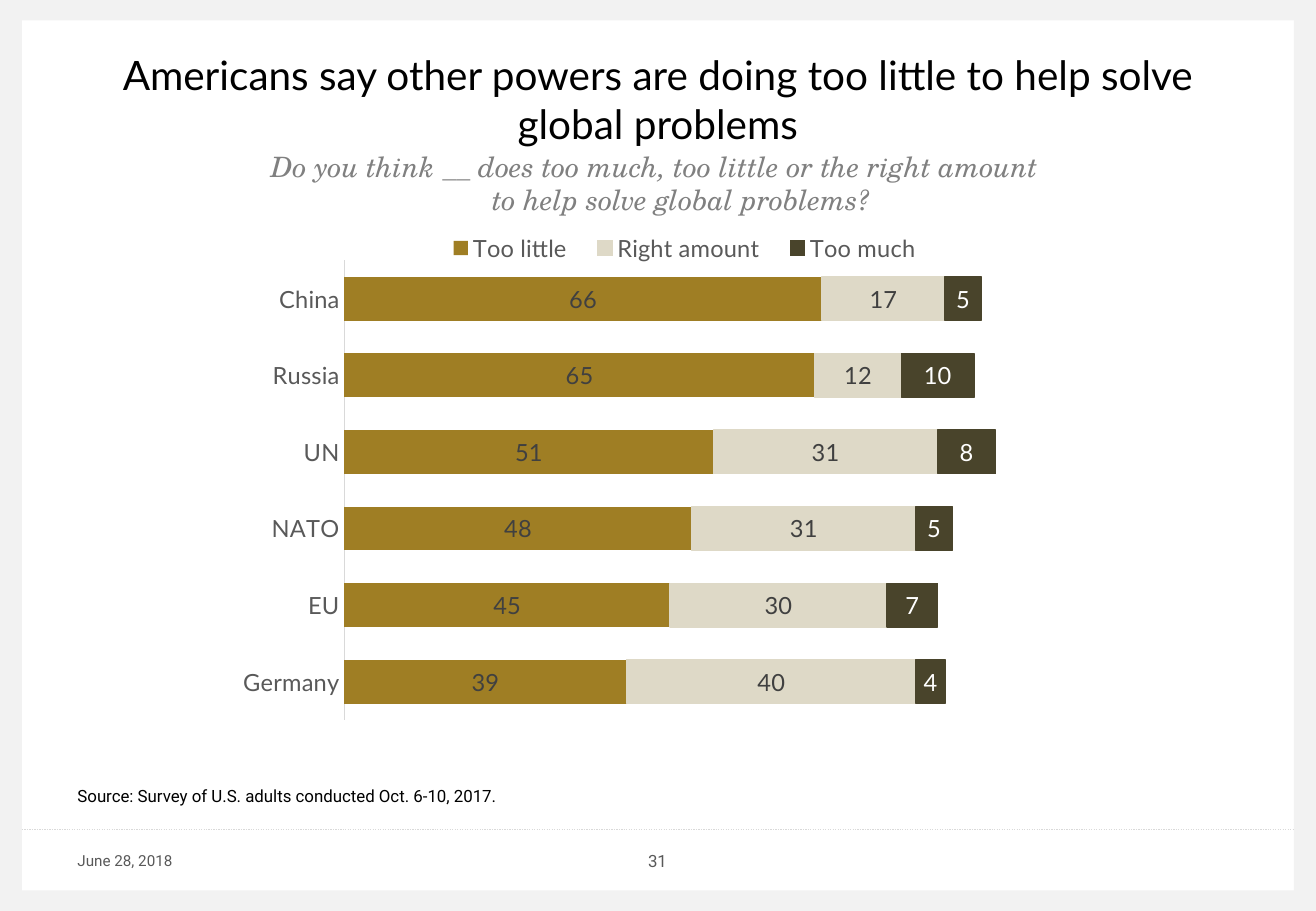
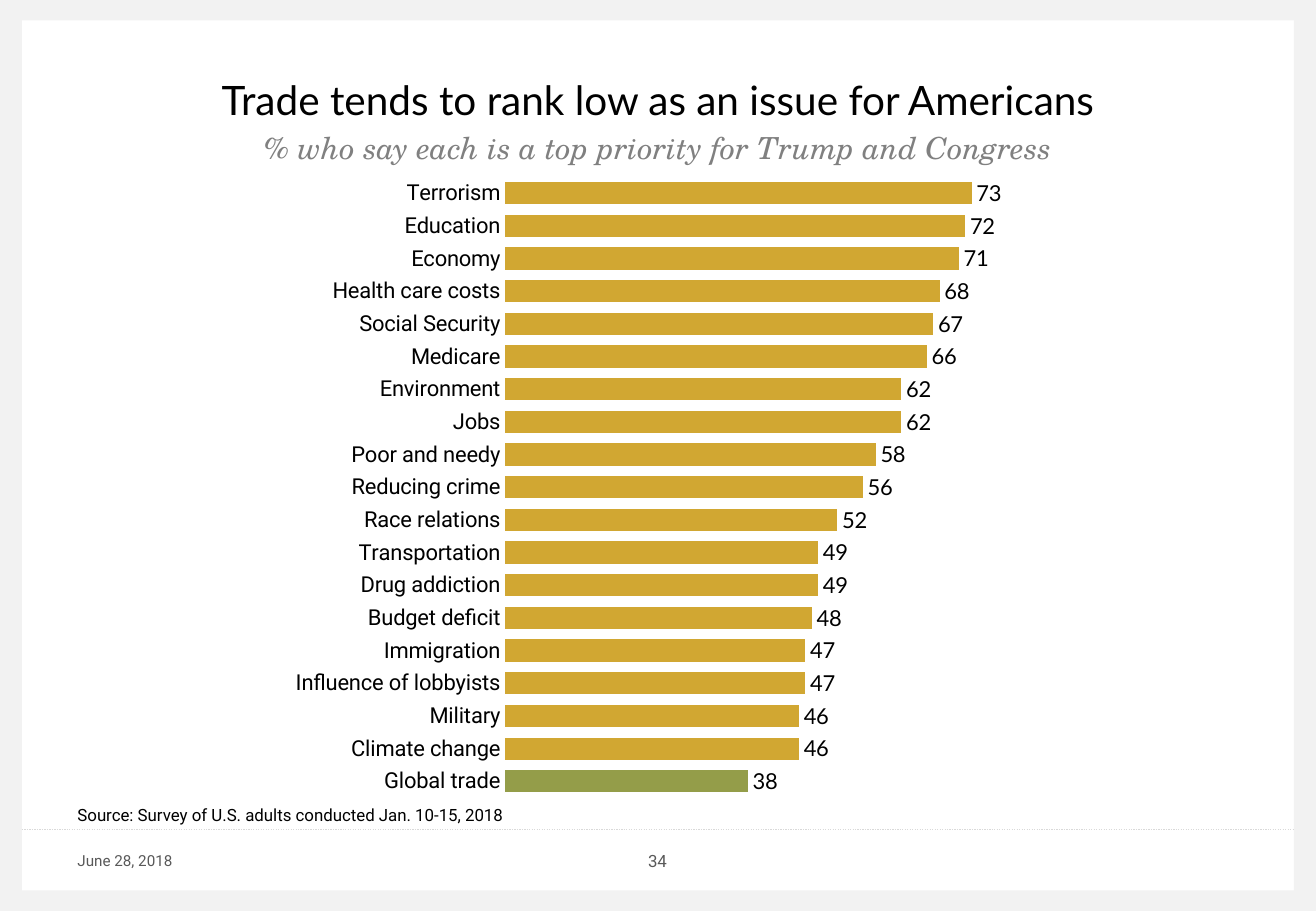
"""Build two survey slides, each with a titled bar chart in a shared frame."""
from lxml import etree
from pptx import Presentation
from pptx.chart.data import CategoryChartData
from pptx.dml.color import RGBColor
from pptx.enum.chart import (XL_CHART_TYPE, XL_LABEL_POSITION, XL_LEGEND_POSITION,
                             XL_TICK_LABEL_POSITION, XL_TICK_MARK)
from pptx.enum.dml import MSO_LINE
from pptx.enum.shapes import MSO_CONNECTOR, MSO_SHAPE
from pptx.enum.text import MSO_ANCHOR, MSO_AUTO_SIZE, PP_ALIGN
from pptx.oxml.ns import qn
from pptx.util import Cm, Pt

CENTER, LEFT = PP_ALIGN.CENTER, PP_ALIGN.LEFT
TOP, MIDDLE, BOTTOM = MSO_ANCHOR.TOP, MSO_ANCHOR.MIDDLE, MSO_ANCHOR.BOTTOM
STACKED, CLUSTERED = XL_CHART_TYPE.BAR_STACKED, XL_CHART_TYPE.BAR_CLUSTERED
LABEL_CENTER, LABEL_END = XL_LABEL_POSITION.CENTER, XL_LABEL_POSITION.OUTSIDE_END
NO_TICK, NO_LABELS = XL_TICK_MARK.NONE, XL_TICK_LABEL_POSITION.NONE

HEADING, BODY, ITALIC = "Lato", "Roboto", "TeX Gyre Schola"
BLACK, WHITE, GRAY, DARK = "000000", "FFFFFF", "595959", "404040"
MUTED, RULE, BAND = "808080", "D9D9D9", "F2F2F2"

WIDTH, HEIGHT = 27.52, 19.05
SIDE, EDGE = 0.46, 0.43
MARGIN, CONTENT_WIDTH = 1.37, 24.77
RULE_Y, FOOTER_Y, FOOTER_HEIGHT = 17.35, 17.58, 0.84
HANGING = 0.97
DATE = "June 28, 2018"

SLIDES = [
    {
        "number": "31",
        "title": "Americans say other powers are doing too little to help solve global problems",
        "question": "Do you think __ does too much, too little or the right amount \v"
                    "to help solve global problems?",
        "question_top": 3.18, "question_size": 16.6,
        "source": "Source: Survey of U.S. adults conducted Oct. 6-10, 2017.",
        "source_top": 16.31,
        "chart": {
            "type": STACKED, "box": (4.6, 3.89, 18.34, 11.28), "gap": 75,
            "plot": (0.142, 0.138, 0.825, 0.852), "legend": (0.24, 0.07, 0.58, 0.09),
            "axis_font": (HEADING, 14, GRAY), "axis_line": RULE, "reverse": False,
            "label_position": LABEL_CENTER,
            "categories": ["Germany", "EU", "NATO", "UN", "Russia", "China"],
            "series": [
                {"name": "Too little", "values": (39, 45, 48, 51, 65, 66),
                 "color": "9F7E24", "label_font": (HEADING, 14, DARK)},
                {"name": "Right amount", "values": (40, 30, 31, 31, 12, 17),
                 "color": "DED9C7", "line": "DED9C7", "label_font": (HEADING, 14, DARK)},
                {"name": "Too much", "values": (4, 7, 5, 8, 10, 5),
                 "color": "49442B", "line": "49442B", "label_font": (HEADING, 14, WHITE)},
            ],
        },
    },
    {
        "number": "34",
        "title": "Trade tends to rank low as an issue for Americans",
        "question": "% who say each is a top priority for Trump and Congress",
        "question_top": 2.11, "question_size": 18,
        "source": "Source: Survey of U.S. adults conducted Jan. 10-15, 2018",
        "source_top": 16.71,
        "chart": {
            "type": CLUSTERED, "box": (5.51, 3.43, 18.57, 13.51), "gap": 47,
            "plot": (0.272, 0.02, 0.72, 0.961),
            "axis_font": (BODY, 13, BLACK), "axis_line": None, "reverse": True,
            "label_position": LABEL_END,
            "categories": [
                "Terrorism", "Education", "Economy", "Health care costs", "Social Security",
                "Medicare", "Environment", "Jobs", "Poor and needy", "Reducing crime",
                "Race relations", "Transportation", "Drug addiction", "Budget deficit",
                "Immigration", "Influence of lobbyists", "Military", "Climate change",
                "Global trade"],
            "series": [
                {"name": "Series 1", "color": "D1A732", "points": {18: "949D49"},
                 "values": (73, 72, 71, 68, 67, 66, 62, 62, 58, 56, 52, 49, 49, 48, 47, 47,
                            46, 46, 38),
                 "label_font": (HEADING, 13, BLACK)},
            ],
        },
    },
]


def rgb(color):
    return RGBColor.from_string(color)


def style_font(font, name, size, color, italic=False):
    font.name, font.size, font.italic = name, Pt(size), italic
    font.color.rgb = rgb(color)


def paint(format_, color):
    format_.fill.solid()
    format_.fill.fore_color.rgb = rgb(color)


def write(shape, text, font, align=LEFT, anchor=MIDDLE, hanging=0.0):
    frame = shape.text_frame
    frame.word_wrap = True
    frame.auto_size = MSO_AUTO_SIZE.NONE
    frame.vertical_anchor = anchor
    frame.text = text
    paragraph = frame.paragraphs[0]
    paragraph.alignment = align
    if hanging:
        properties = paragraph._p.get_or_add_pPr()
        properties.set("marL", str(Cm(hanging)))
        properties.set("indent", str(-Cm(hanging)))
    style_font(paragraph.font, *font)


def add_text(slide, box, *content, **options):
    write(slide.shapes.add_textbox(*map(Cm, box)), *content, **options)


def add_frame(slide, number):
    inner_width = WIDTH - 2 * SIDE
    bands = [(0, 0, SIDE, HEIGHT), (WIDTH - SIDE, 0, SIDE, HEIGHT),
             (SIDE, 0, inner_width, EDGE), (SIDE, HEIGHT - EDGE, inner_width, EDGE)]
    for box in bands:
        band = slide.shapes.add_shape(MSO_SHAPE.RECTANGLE, *map(Cm, box))
        band.shadow.inherit = False
        paint(band, BAND)
        band.line.fill.background()
    rule = slide.shapes.add_connector(
        MSO_CONNECTOR.STRAIGHT, Cm(SIDE), Cm(RULE_Y), Cm(WIDTH - SIDE), Cm(RULE_Y))
    rule.line.color.rgb = rgb(RULE)
    rule.line.width = Pt(0.75)
    rule.line.dash_style = MSO_LINE.ROUND_DOT
    etree.SubElement(rule._element.spPr, qn("a:effectLst"))
    add_text(slide, (MARGIN, FOOTER_Y, 3.66, FOOTER_HEIGHT), DATE, (BODY, 9, GRAY))
    number_width = 3.2
    add_text(slide, ((WIDTH - number_width) / 2 - 0.01, FOOTER_Y, number_width, FOOTER_HEIGHT),
             number, (BODY, 10, GRAY), align=CENTER)


def set_layout(parent, index, fractions, inner=False):
    for existing in parent.findall(qn("c:layout")):
        parent.remove(existing)
    layout = etree.Element(qn("c:layout"))
    manual = etree.SubElement(layout, qn("c:manualLayout"))
    settings = [("layoutTarget", "inner")] if inner else []
    settings += [("xMode", "edge"), ("yMode", "edge")]
    settings += zip("xywh", map(str, fractions))
    for tag, value in settings:
        etree.SubElement(manual, qn("c:" + tag)).set("val", value)
    parent.insert(index, layout)


def style_axes(chart, content):
    category_axis, value_axis = chart.category_axis, chart.value_axis
    category_axis.major_tick_mark = NO_TICK
    category_axis.reverse_order = content["reverse"]
    style_font(category_axis.tick_labels.font, *content["axis_font"])
    line = category_axis.format.line
    if content["axis_line"]:
        line.color.rgb = rgb(content["axis_line"])
        line.width = Pt(0.75)
    else:
        line.fill.background()
    value_axis.minimum_scale, value_axis.maximum_scale = 0, 100
    value_axis.has_major_gridlines = False
    value_axis.major_tick_mark = NO_TICK
    value_axis.tick_label_position = NO_LABELS
    value_axis.format.line.fill.background()


def add_bar_chart(slide, content):
    data = CategoryChartData()
    data.categories = content["categories"]
    for entry in content["series"]:
        data.add_series(entry["name"], entry["values"])
    chart = slide.shapes.add_chart(content["type"], *map(Cm, content["box"]), data).chart
    style_font(chart.font, BODY, 10, BLACK)
    chart.has_title = False
    plot = chart.plots[0]
    plot.vary_by_categories = False
    plot.gap_width = content["gap"]
    style_axes(chart, content)
    for series, entry in zip(plot.series, content["series"]):
        paint(series.format, entry["color"])
        if "line" in entry:
            series.format.line.color.rgb = rgb(entry["line"])
            series.format.line.width = Pt(0.75)
        for index, color in entry.get("points", {}).items():
            paint(series.points[index].format, color)
        labels = series.data_labels
        labels.show_value = True
        labels.position = content["label_position"]
        style_font(labels.font, *entry["label_font"])
    chart.has_legend = "legend" in content
    if chart.has_legend:
        legend = chart.legend
        legend.position = XL_LEGEND_POSITION.BOTTOM
        legend.include_in_layout = False
        style_font(legend.font, *content["axis_font"])
        set_layout(legend._element, 1, content["legend"])
    set_layout(chart._chartSpace.chart.plotArea, 0, content["plot"], inner=True)


def build_slide(presentation, content):
    slide = presentation.slides.add_slide(presentation.slide_layouts[5])
    add_frame(slide, content["number"])
    title = slide.shapes.title
    title.left, title.top = Cm(MARGIN), Cm(0.76)
    title.width, title.height = Cm(CONTENT_WIDTH), Cm(2.62)
    write(title, content["title"], (HEADING, 24, BLACK), align=CENTER)
    add_text(slide, (MARGIN, content["question_top"], CONTENT_WIDTH, 1.47),
             content["question"], (ITALIC, content["question_size"], MUTED, True),
             align=CENTER, anchor=BOTTOM, hanging=HANGING)
    add_text(slide, (MARGIN, content["source_top"], 22.94, 0.64),
             content["source"], (BODY, 10, BLACK), anchor=TOP, hanging=HANGING)
    add_bar_chart(slide, content["chart"])


def main():
    presentation = Presentation()
    presentation.slide_width, presentation.slide_height = Cm(WIDTH), Cm(HEIGHT)
    for content in SLIDES:
        build_slide(presentation, content)
    presentation.save("out.pptx")


if __name__ == "__main__":
    main()
